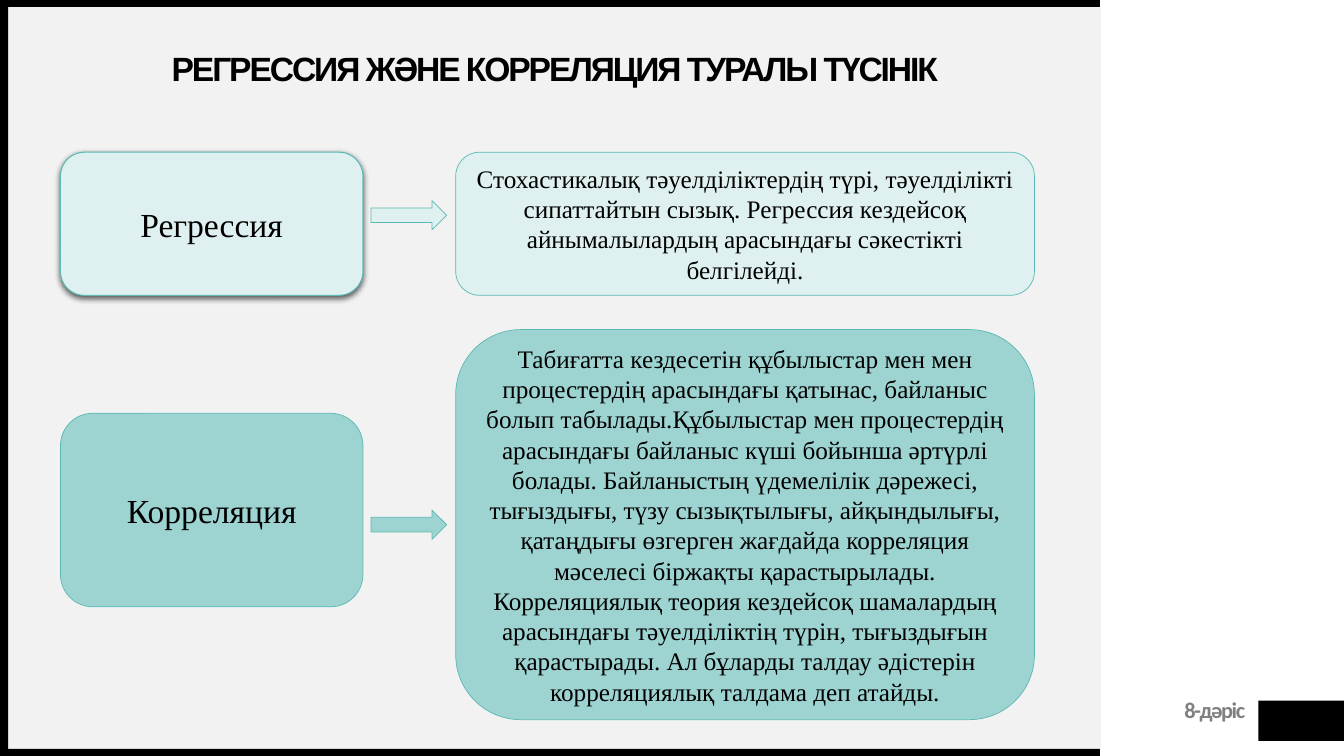
from lxml import etree
from pptx import Presentation
from pptx.dml.color import RGBColor
from pptx.enum.shapes import MSO_SHAPE
from pptx.enum.text import MSO_ANCHOR, PP_ALIGN
from pptx.oxml.ns import qn
from pptx.util import Inches, Pt

RECT, ROUND = MSO_SHAPE.RECTANGLE, MSO_SHAPE.ROUNDED_RECTANGLE
ARROW = MSO_SHAPE.RIGHT_ARROW
MIDDLE, TOP = MSO_ANCHOR.MIDDLE, MSO_ANCHOR.TOP
CENTER, RIGHT = PP_ALIGN.CENTER, PP_ALIGN.RIGHT
WIDE, HIGH, EDGE, PANEL = 13.33, 7.5, 0.07, 10.91
TEAL, BLACK = "5CB8B3", "000000"

deck = Presentation()
deck.slide_width, deck.slide_height = Inches(WIDE), Inches(HIGH)
slide = deck.slides.add_slide(deck.slide_layouts[5])
shapes = slide.shapes


def draw(kind, at, fill, line=None):
    shape = shapes.add_shape(kind, *map(Inches, at))
    shape.shadow.inherit = False
    shape.fill.solid()
    shape.fill.fore_color.rgb = RGBColor.from_string(fill)
    if line:
        shape.line.color.rgb = RGBColor.from_string(TEAL)
        shape.line.width = Pt(line)
    else:
        shape.line.fill.background()
    return shape


def write(shape, text, look, align=CENTER, anchor=MIDDLE, lead=None, track=0):
    frame = shape.text_frame
    frame.word_wrap = True
    frame.vertical_anchor = anchor
    frame.text = text
    for para in frame.paragraphs:
        para.alignment = align
        if lead:
            para.line_spacing = lead
        for run in para.runs:
            tint = look.get("color", BLACK)
            run.font.color.rgb = RGBColor.from_string(tint)
            for key, value in look.items():
                if key != "color":
                    setattr(run.font, key, value)
            if track:
                run.font._element.set("spc", str(int(track * 100)))


# Grey panel with its black frame, and the corner block
for at, fill in [
    ((0.08, EDGE, 10.84, HIGH - 2 * EDGE), "F2F2F2"),
    ((12.48, 6.95, 0.86, 0.4), BLACK),
    ((0, HIGH - EDGE, PANEL, EDGE), BLACK),
    ((0, 0, PANEL, EDGE), BLACK),
    ((0, 0, 0.08, HIGH), BLACK),
]:
    draw(RECT, at, fill)

# Lecture label
label = shapes.add_textbox(*map(Inches, (10.53, 6.94, 1.82, 0.25)))
gaps = {"margin_left": 0, "margin_right": 0, "margin_bottom": 0}
for key, value in {**gaps, "margin_top": Inches(0.04)}.items():
    setattr(label.text_frame, key, value)
write(label, "8-дәріс",
      {"name": "Calibri", "size": Pt(16), "bold": True, "color": "808080"},
      RIGHT, TOP, Pt(14), -1)

# Title, brought in front of the panel
title = shapes.title
place = dict(zip(("left", "top", "width", "height"),
                 map(Inches, (0.47, 0.47, 10.06, 0.47))))
for key, value in place.items():
    setattr(title, key, value)
for key, value in {**gaps, "margin_top": 0}.items():
    setattr(title.text_frame, key, value)
write(title, "РЕГРЕССИЯ ЖӘНЕ КОРРЕЛЯЦИЯ ТУРАЛЫ ТҮСІНІК",
      {"name": "Arial", "size": Pt(24), "bold": True}, lead=0.9, track=-1.5)
shapes._spTree.append(title._element)

# Rows: term, arrow, meaning (each with top and height)
rows = [
    ("DEF1F0", "Регрессия", (1.51, 1.42), 1.99, (1.51, 1.42), 0.75,
     "Стохастикалық тәуелділіктердің түрі, тәуелділікті сипаттайтын сызық. "
     "Регрессия кездейсоқ айнымалылардың арасындағы сәкестікті белгілейді."),
    ("9DD4D1", "Корреляция", (4.1, 1.92), 5.06, (3.27, 3.87), 0.5,
     "Табиғатта кездесетін құбылыстар мен мен процестердің арасындағы қатынас, "
     "байланыс болып табылады.Құбылыстар мен процестердің арасындағы байланыс "
     "күші бойынша әртүрлі болады. Байланыстың үдемелілік дәрежесі, тығыздығы, "
     "түзу сызықтылығы, айқындылығы, қатаңдығы өзгерген жағдайда корреляция "
     "мәселесі біржақты қарастырылады.\n"
     "Корреляциялық теория кездейсоқ шамалардың арасындағы тәуелділіктің түрін, "
     "тығыздығын қарастырады. Ал бұларды талдау әдістерін корреляциялық талдама "
     "деп атайды."),
]
terms = []
for fill, term, (top, tall), mid, (start, depth), line, text in rows:
    box = draw(ROUND, (0.6, top, 3, tall), fill, line)
    write(box, term, {"name": "Times New Roman", "size": Pt(24)})
    draw(ARROW, (3.68, mid, 0.75, 0.29), fill, 0.5)
    note = draw(ROUND, (4.52, start, 5.74, depth), fill, 0.5)
    write(note, text, {"name": "Times New Roman", "size": Pt(18)})
    terms.append(box)

# Soft shadow below the first term
effects = terms[0]._element.spPr.find(qn("a:effectLst"))
shade = etree.SubElement(effects, qn("a:outerShdw"), blurRad=str(Pt(4.5)),
                         dist=str(Pt(1.5)), dir="5400000", rotWithShape="0")
tone = etree.SubElement(shade, qn("a:srgbClr"), val=BLACK)
etree.SubElement(tone, qn("a:alpha"), val="63000")

deck.save("out.pptx")
